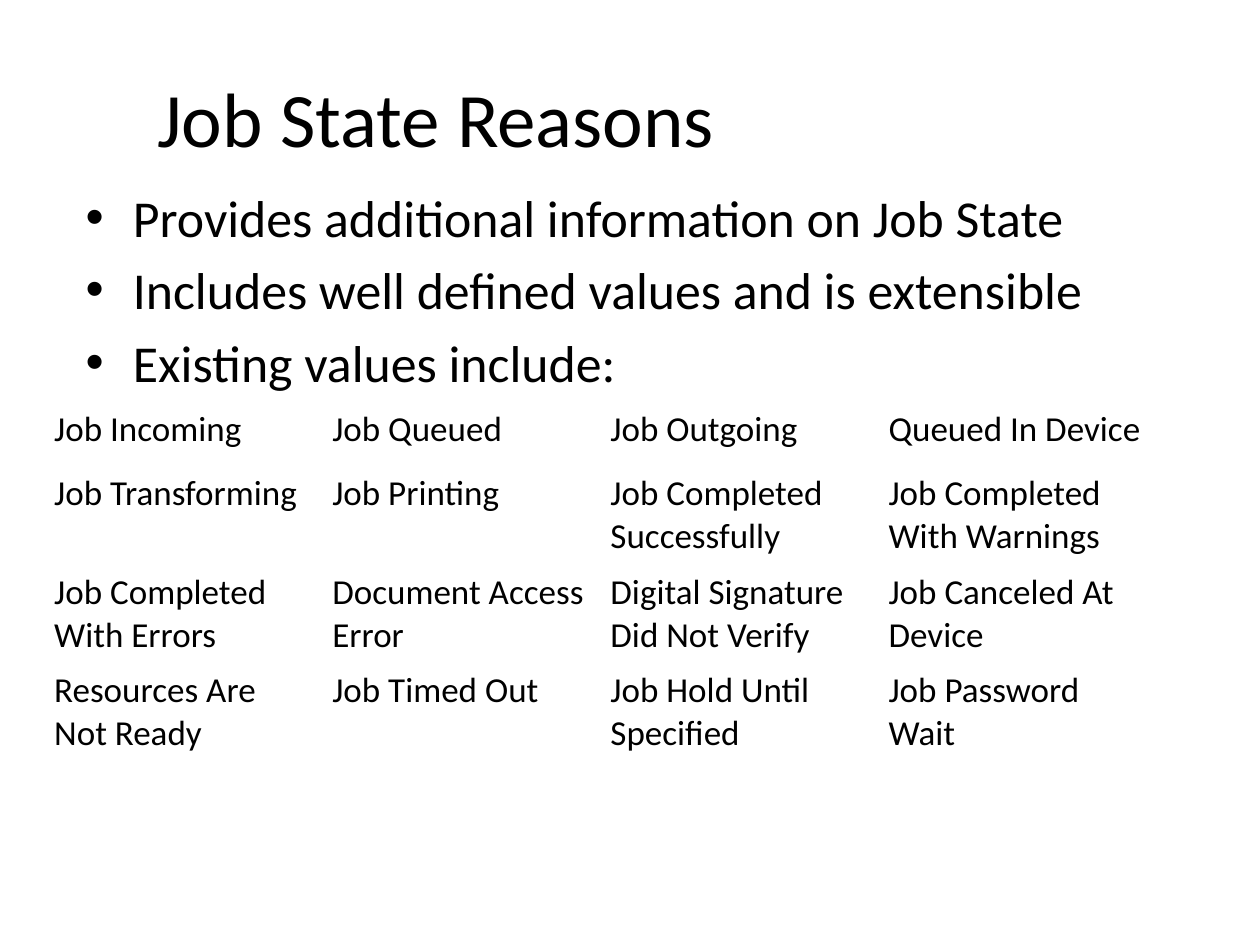
from dataclasses import dataclass

from lxml import etree
from pptx import Presentation
from pptx.dml.color import RGBColor
from pptx.enum.text import MSO_ANCHOR, MSO_AUTO_SIZE, PP_ALIGN
from pptx.oxml.ns import qn
from pptx.util import Inches, Pt

CENTER, LEFT = PP_ALIGN.CENTER, PP_ALIGN.LEFT
MIDDLE, TOP = MSO_ANCHOR.MIDDLE, MSO_ANCHOR.TOP
NO_AUTOFIT = MSO_AUTO_SIZE.NONE
CELL_BORDERS = ("a:lnL", "a:lnR", "a:lnT", "a:lnB")


@dataclass(frozen=True)
class Theme:
    font: str = "Calibri"
    text: RGBColor = RGBColor(0, 0, 0)
    title_size: float = 44
    body_size: float = 29.6
    table_size: float = 20


THEME = Theme()

TITLE = "Job State Reasons"
BULLETS = [
    "Provides additional information on Job State",
    "Includes well defined values and is extensible",
    "Existing values include:",
]
REASONS = [
    ["Job Incoming", "Job Queued", "Job Outgoing", "Queued In Device"],
    ["Job Transforming", "Job Printing", "Job Completed Successfully",
     "Job Completed With Warnings"],
    ["Job Completed With Errors", "Document Access Error",
     "Digital Signature Did Not Verify", "Job Canceled At Device"],
    ["Resources Are Not Ready", "Job Timed Out", "Job Hold Until Specified",
     "Job Password Wait"],
]
HEADER_HEIGHT = 0.44
REASON_HEIGHTS = [0.51, 0.41, 0.38, 0.38]


def write(paragraph, text, *, size, align=LEFT):
    """Add formatted text to a paragraph."""
    paragraph.alignment = align
    run = paragraph.add_run()
    run.text = text
    run.font.name = THEME.font
    run.font.size = Pt(size)
    run.font.color.rgb = THEME.text


def place(shape, box, anchor):
    """Move a placeholder into a box given in inches."""
    shape.left, shape.top, shape.width, shape.height = map(Inches, box)
    text_frame = shape.text_frame
    text_frame.word_wrap = True
    text_frame.auto_size = NO_AUTOFIT
    text_frame.vertical_anchor = anchor
    return text_frame


def clear_cell(cell):
    """Remove the fill and the borders of a table cell."""
    cell.fill.background()
    properties = cell._tc.get_or_add_tcPr()
    for index, tag in enumerate(CELL_BORDERS):
        border = etree.Element(qn(tag), w="0")
        etree.SubElement(border, qn("a:noFill"))
        properties.insert(index, border)


def add_title(slide, box):
    text_frame = place(slide.shapes.title, box, MIDDLE)
    write(text_frame.paragraphs[0], TITLE, size=THEME.title_size, align=CENTER)


def add_bullets(slide, box):
    text_frame = place(slide.placeholders[1], box, TOP)
    for index, text in enumerate(BULLETS):
        paragraph = text_frame.add_paragraph() if index else text_frame.paragraphs[0]
        write(paragraph, text, size=THEME.body_size)


def add_reasons_table(slide, box):
    """Plain grid of reasons below an empty header row."""
    rows = [[""] * len(REASONS[0])] + REASONS
    table = slide.shapes.add_table(len(rows), len(rows[0]), *map(Inches, box)).table
    table.first_row = table.horz_banding = False
    for column in table.columns:
        column.width = Inches(box[2] / len(rows[0]))
    for row, height, texts in zip(table.rows, [HEADER_HEIGHT] + REASON_HEIGHTS, rows):
        row.height = Inches(height)
        for cell, text in zip(row.cells, texts):
            clear_cell(cell)
            if text:
                write(cell.text_frame.paragraphs[0], text, size=THEME.table_size)


def main():
    presentation = Presentation()
    presentation.slide_width, presentation.slide_height = Inches(10), Inches(7.5)
    slide = presentation.slides.add_slide(presentation.slide_layouts[1])

    # Heading, introduction and list of values
    add_title(slide, (0.5, 0.3, 5.92, 1.25))
    add_bullets(slide, (0.58, 1.42, 9, 1.67))
    add_reasons_table(slide, (0.33, 2.75, 8.83, 3.24))

    presentation.save("out.pptx")


if __name__ == "__main__":
    main()
